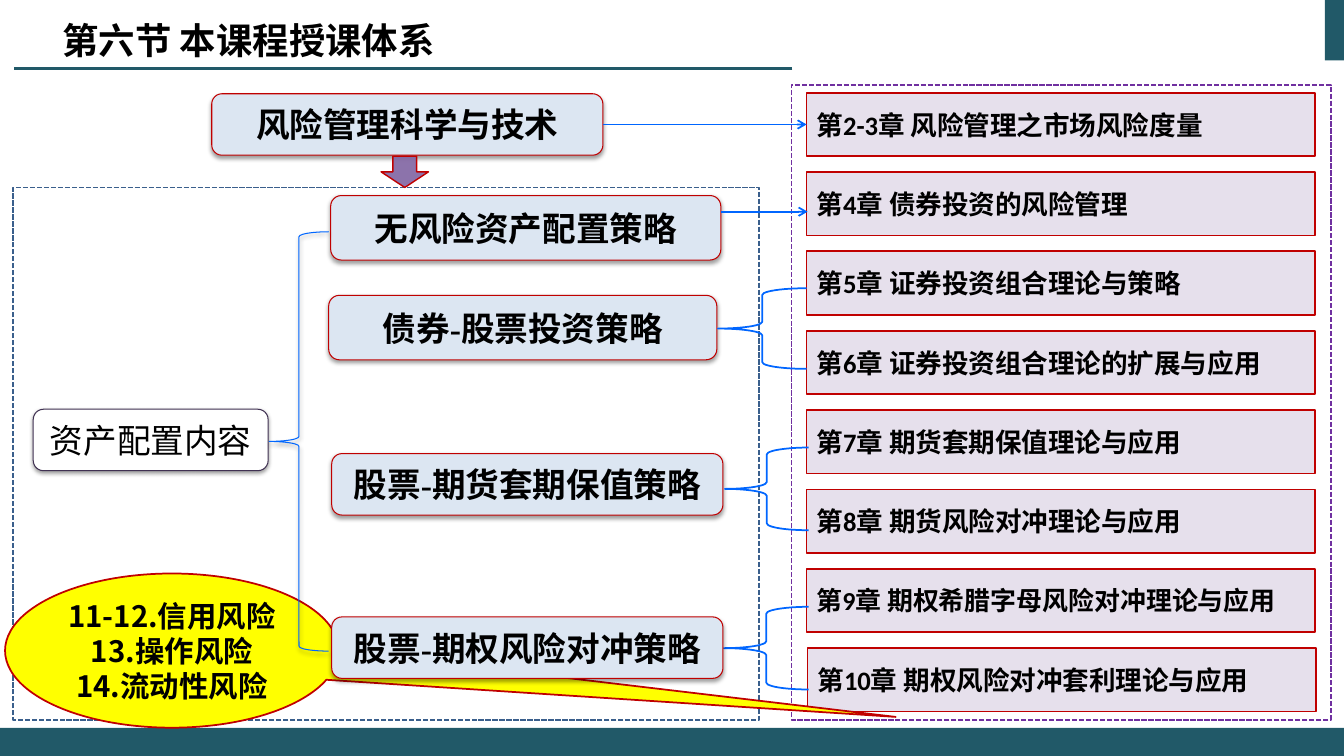
from lxml import etree
from pptx import Presentation
from pptx import util as u
from pptx.dml.color import RGBColor
from pptx.enum import dml, shapes, text
from pptx.oxml.ns import qn

TEAL = RGBColor(0x21, 0x59, 0x68)
BLACK = RGBColor(0, 0, 0)
WHITE = RGBColor(0xFF, 0xFF, 0xFF)
RED = RGBColor(0xC0, 0, 0)
BLUE = RGBColor(0, 0x66, 0xFF)
PALE_BLUE = RGBColor(0xDC, 0xE6, 0xF2)
PALE_PURPLE = RGBColor(0xE6, 0xE0, 0xEC)
PURPLE = RGBColor(0x80, 0x64, 0xA2)
DARK_PURPLE = RGBColor(0x40, 0x31, 0x52)
FRAME_BLUE = RGBColor(0x3A, 0x5F, 0x8C)
FRAME_PURPLE = RGBColor(0x70, 0x30, 0xA0)
YELLOW = RGBColor(0xFF, 0xFF, 0)

CJK = "Noto Sans CJK SC"
SERIF = "Times New Roman"
SANS = "Calibri"
KIND = shapes.MSO_SHAPE


def write(sp, content, size, font=SANS, bold=True, align=text.PP_ALIGN.LEFT,
          anchor=text.MSO_ANCHOR.MIDDLE, wrap=True):
    tf = sp.text_frame
    tf.word_wrap = wrap
    tf.vertical_anchor = anchor
    for i, line in enumerate(content.split("\n")):
        p = tf.paragraphs[0] if i == 0 else tf.add_paragraph()
        p.alignment = align
        r = p.add_run()
        r.text = line
        r.font.size = u.Pt(size)
        r.font.bold = bold
        r.font.color.rgb = BLACK
        r.font.name = font
        latin = r._r.rPr.find(qn("a:latin"))
        latin.addnext(latin.makeelement(qn("a:ea"), {"typeface": CJK}))


class Diagram:
    def __init__(self, slide):
        self.slide = slide

    def shape(self, kind, x, y, w, h, fill=None, line=None, width=1.25,
              dashed=False, shadow=False):
        sp = self.slide.shapes.add_shape(
            kind, u.Inches(x), u.Inches(y), u.Inches(w), u.Inches(h))
        sp.shadow.inherit = False
        if fill is None:
            sp.fill.background()
        else:
            sp.fill.solid()
            sp.fill.fore_color.rgb = fill
        if line is None:
            sp.line.fill.background()
        else:
            sp.line.color.rgb = line
            sp.line.width = u.Pt(width)
        if dashed:
            sp.line.dash_style = dml.MSO_LINE.SQUARE_DOT
        if shadow:
            self.cast_shadow(sp)
        return sp

    def cast_shadow(self, sp):
        effects = sp._element.spPr.find(qn("a:effectLst"))
        outer = etree.SubElement(
            effects, qn("a:outerShdw"), blurRad=str(u.Pt(3.1)),
            dist=str(u.Pt(1.6)), dir="5400000", rotWithShape="0")
        color = etree.SubElement(outer, qn("a:srgbClr"), val="000000")
        etree.SubElement(color, qn("a:alpha"), val="38000")

    def topic(self, content, x, y, w, h=0.61, fill=PALE_BLUE, line=RED,
              font=SERIF, bold=True):
        """Rounded, shadowed box with a centred label."""
        sp = self.shape(KIND.ROUNDED_RECTANGLE, x, y, w, h, fill, line, 0.75,
                        shadow=True)
        write(sp, content, 24, font, bold, text.PP_ALIGN.CENTER, wrap=False)
        return sp

    def chapter(self, content, x, y, size):
        sp = self.shape(KIND.RECTANGLE, x, y, 5.04, 0.63, PALE_PURPLE, RED)
        write(sp, content, size)
        return sp

    def brace(self, x, y, w, h, **style):
        return self.shape(KIND.LEFT_BRACE, x, y, w, h, line=BLUE, **style)

    def line(self, x1, y1, x2, y2, color, width, arrow=False):
        cn = self.slide.shapes.add_connector(
            shapes.MSO_CONNECTOR.STRAIGHT,
            u.Inches(x1), u.Inches(y1), u.Inches(x2), u.Inches(y2))
        cn.line.color.rgb = color
        cn.line.width = u.Pt(width)
        if arrow:
            etree.SubElement(cn.line._get_or_add_ln(), qn("a:tailEnd"), type="arrow")
        etree.SubElement(cn._element.spPr, qn("a:effectLst"))
        return cn

    def title(self, content):
        sp = self.slide.shapes.add_textbox(
            u.Inches(0.52), u.Inches(0.13), u.Inches(6.93), u.Inches(0.54))
        write(sp, content, 26, CJK, anchor=text.MSO_ANCHOR.TOP)


CHAPTERS = [
    "第2-3章 风险管理之市场风险度量",
    "第4章 债券投资的风险管理",
    "第5章 证券投资组合理论与策略",
    "第6章 证券投资组合理论的扩展与应用",
    "第7章 期货套期保值理论与应用",
    "第8章 期货风险对冲理论与应用",
    "第9章 期权希腊字母风险对冲理论与应用",
    "第10章 期权风险对冲套利理论与应用",
]
CHAPTER_TOP = 0.92
CHAPTER_PITCH = 5.51 / 7


def main():
    prs = Presentation()
    prs.slide_width = u.Inches(13.33)
    prs.slide_height = u.Inches(7.5)
    s = Diagram(prs.slides.add_slide(prs.slide_layouts[6]))

    s.shape(KIND.RECTANGLE, 13.14, 0, 0.19, 0.6, TEAL)
    s.line(7.86, 0.68, 0.14, 0.68, TEAL, 1.5)
    s.shape(KIND.RECTANGLE, 0, 7.22, 13.33, 0.28, TEAL)
    s.title("第六节 本课程授课体系")

    s.shape(KIND.RECTANGLE, 0.13, 1.86, 7.4, 5.28, line=FRAME_BLUE, dashed=True)
    s.topic("资产配置内容", 0.33, 4.06, 2.33, fill=WHITE, line=DARK_PURPLE, bold=False)
    s.topic("无风险资产配置策略", 3.28, 1.94, 3.87, 0.64)
    s.topic("债券-股票投资策略", 3.26, 2.93, 3.85, 0.64)
    s.topic("股票-期货套期保值策略", 3.29, 4.5, 3.88)
    science = s.topic("风险管理科学与技术", 2.1, 0.93, 3.88, font=SANS)

    down = s.shape(KIND.DOWN_ARROW, 3.78, 1.55, 0.47, 0.31, PURPLE, RED, 1)
    color = down._element.spPr.find(qn("a:solidFill"))[0]
    etree.SubElement(color, qn("a:alpha"), val="90000")

    s.shape(KIND.RECTANGLE, 7.85, 0.84, 5.35, 6.3, line=FRAME_PURPLE, dashed=True)
    boxes = []
    for i, name in enumerate(CHAPTERS):
        x = 8.01 if name.startswith("第10章") else 8
        size = 18.5 if name.startswith("第9章") else 19
        boxes.append(s.chapter(name, x, CHAPTER_TOP + i * CHAPTER_PITCH, size))

    link = s.line(5.98, 1.24, 8, 1.24, BLUE, 1.25, arrow=True)
    link.begin_connect(science, 3)
    link.end_connect(boxes[0], 1)
    s.line(7.15, 2.1, 8.01, 2.1, BLUE, 1.25, arrow=True)

    s.brace(7.12, 2.86, 0.88, 0.8)
    s.brace(7.19, 4.44, 0.83, 0.82)
    s.brace(7.18, 6.02, 0.84, 0.82)

    risks = s.shape(KIND.OVAL_CALLOUT, 0.05, 5.69, 3.31, 1.53, YELLOW, RED)
    risks.adjustments[0] = 2.169
    risks.adjustments[1] = 0.43
    write(risks, "11-12.信用风险\n13.操作风险\n14.流动性风险", 21, CJK,
          align=text.PP_ALIGN.CENTER, wrap=False)
    s.topic("股票-期权风险对冲策略", 3.29, 6.12, 3.88)
    s.brace(2.67, 2.3, 0.59, 4.16, width=0.75, shadow=True)

    prs.save("out.pptx")


if __name__ == "__main__":
    main()
